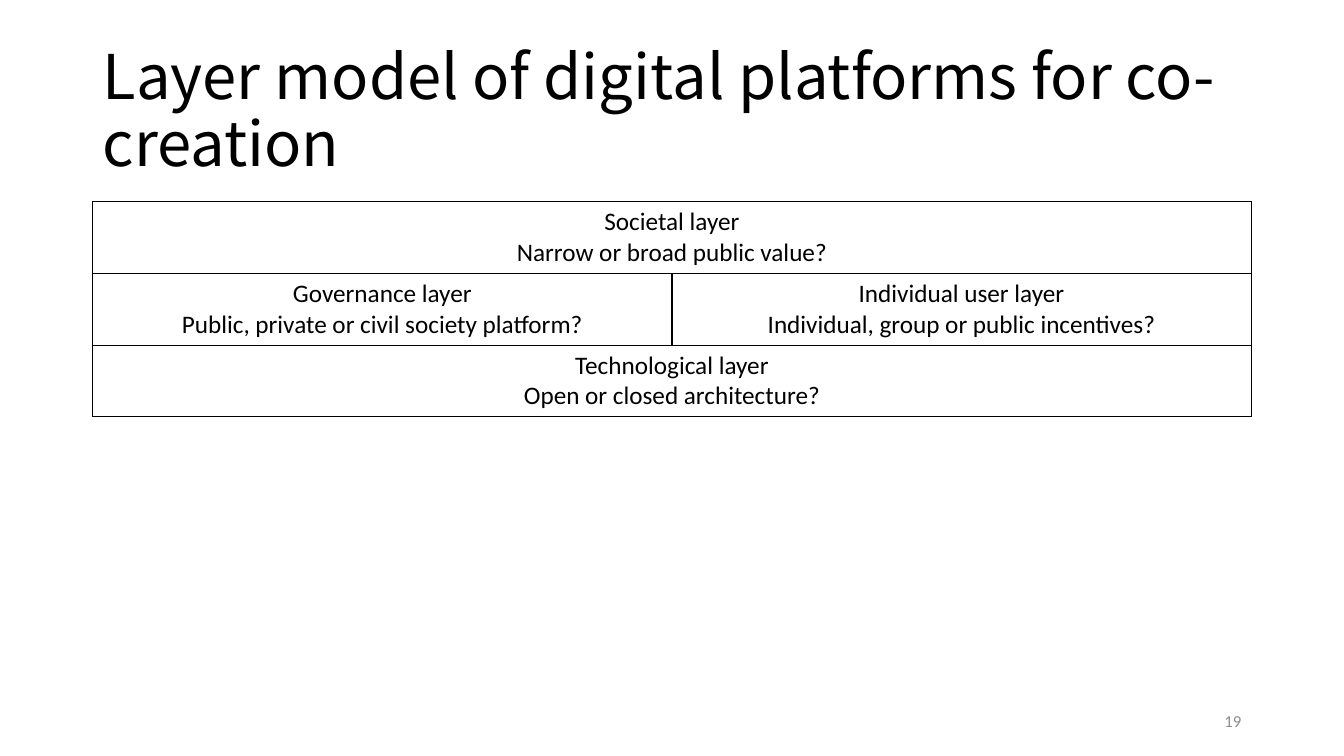
from dataclasses import dataclass

from lxml import etree
from pptx import Presentation
from pptx.dml.color import RGBColor
from pptx.enum.text import MSO_ANCHOR, PP_ALIGN
from pptx.oxml.ns import qn
from pptx.slide import Slide
from pptx.table import Table, _Cell
from pptx.text.text import TextFrame
from pptx.util import Emu, Inches, Pt

BLACK = RGBColor(0x00, 0x00, 0x00)
GREY = RGBColor(0x8C, 0x8C, 0x8C)
MIDDLE = MSO_ANCHOR.MIDDLE
LEFT, CENTER, RIGHT = PP_ALIGN.LEFT, PP_ALIGN.CENTER, PP_ALIGN.RIGHT
TITLE_FONT = "Noto Sans CJK JP"
BODY_FONT = "Calibri"
SLIDE_WIDTH, SLIDE_HEIGHT = Inches(13.33), Inches(7.5)
TITLE_ONLY = 5
COLUMNS = 2
ROW_HEIGHT = Inches(0.71)
BORDER_WIDTH = Pt(1)
BORDER_EDGES = ("a:lnL", "a:lnR", "a:lnT", "a:lnB")


@dataclass(frozen=True)
class Area:
    left: float
    top: float
    width: float
    height: float

    def lengths(self) -> tuple[Emu, Emu, Emu, Emu]:
        return (
            Emu(round(self.left * SLIDE_WIDTH)),
            Emu(round(self.top * SLIDE_HEIGHT)),
            Emu(round(self.width * SLIDE_WIDTH)),
            Emu(round(self.height * SLIDE_HEIGHT)),
        )


@dataclass(frozen=True)
class Layer:
    name: str
    question: str
    row: int
    column: int = 0
    span: int = 1


MARGIN = 0.069
CONTENT_WIDTH = 1 - 2 * MARGIN
NUMBER_WIDTH = 0.225
TITLE_AREA = Area(MARGIN, 0.053, CONTENT_WIDTH, 0.193)
TABLE_AREA = Area(MARGIN, 0.267, CONTENT_WIDTH, 0.284)
NUMBER_AREA = Area(1 - MARGIN - NUMBER_WIDTH, 0.927, NUMBER_WIDTH, 0.053)

LAYERS = (
    Layer("Societal layer", "Narrow or broad public value?", 0, span=COLUMNS),
    Layer("Governance layer", "Public, private or civil society platform?", 1),
    Layer("Individual user layer", "Individual, group or public incentives?", 1, 1),
    Layer("Technological layer", "Open or closed architecture?", 2, span=COLUMNS),
)


def format_text(
    frame: TextFrame, font: str, size: int, color: RGBColor, alignment: PP_ALIGN
) -> None:
    for paragraph in frame.paragraphs:
        paragraph.alignment = alignment
        for run in paragraph.runs:
            run.font.name = font
            run.font.size = Pt(size)
            run.font.color.rgb = color


def outline_cell(cell: _Cell) -> None:
    properties = cell._tc.get_or_add_tcPr()
    for edge in BORDER_EDGES:
        border = etree.SubElement(properties, qn(edge), w=str(BORDER_WIDTH))
        fill = etree.SubElement(border, qn("a:solidFill"))
        etree.SubElement(fill, qn("a:srgbClr"), val=str(BLACK))
    cell.fill.background()


def add_title(slide: Slide, wording: str) -> None:
    title = slide.shapes.title
    title.left, title.top, title.width, title.height = TITLE_AREA.lengths()
    frame = title.text_frame
    frame.text = wording
    frame.word_wrap = True
    frame.vertical_anchor = MIDDLE
    frame.paragraphs[0].line_spacing = 0.9
    format_text(frame, TITLE_FONT, 44, BLACK, LEFT)


def fill_layer(table: Table, layer: Layer) -> None:
    cell = table.cell(layer.row, layer.column)
    if layer.span > 1:
        cell.merge(table.cell(layer.row, layer.column + layer.span - 1))
    cell.text_frame.text = f"{layer.name}\n{layer.question}"
    format_text(cell.text_frame, BODY_FONT, 18, BLACK, CENTER)


def add_layer_model(slide: Slide) -> None:
    row_count = max(layer.row for layer in LAYERS) + 1
    table = slide.shapes.add_table(row_count, COLUMNS, *TABLE_AREA.lengths()).table
    table.first_row = False
    table.horz_banding = False
    for row in table.rows:
        row.height = ROW_HEIGHT
    for cell in table.iter_cells():
        outline_cell(cell)
    for layer in LAYERS:
        fill_layer(table, layer)


def add_slide_number(slide: Slide, number: int) -> None:
    frame = slide.shapes.add_textbox(*NUMBER_AREA.lengths()).text_frame
    frame.text = str(number)
    frame.word_wrap = True
    frame.vertical_anchor = MIDDLE
    format_text(frame, BODY_FONT, 12, GREY, RIGHT)


def main() -> None:
    presentation = Presentation()
    presentation.slide_width = SLIDE_WIDTH
    presentation.slide_height = SLIDE_HEIGHT
    slide = presentation.slides.add_slide(presentation.slide_layouts[TITLE_ONLY])
    add_title(slide, "Layer model of digital platforms for co-creation")
    add_layer_model(slide)
    add_slide_number(slide, 19)
    presentation.save("out.pptx")


if __name__ == "__main__":
    main()
